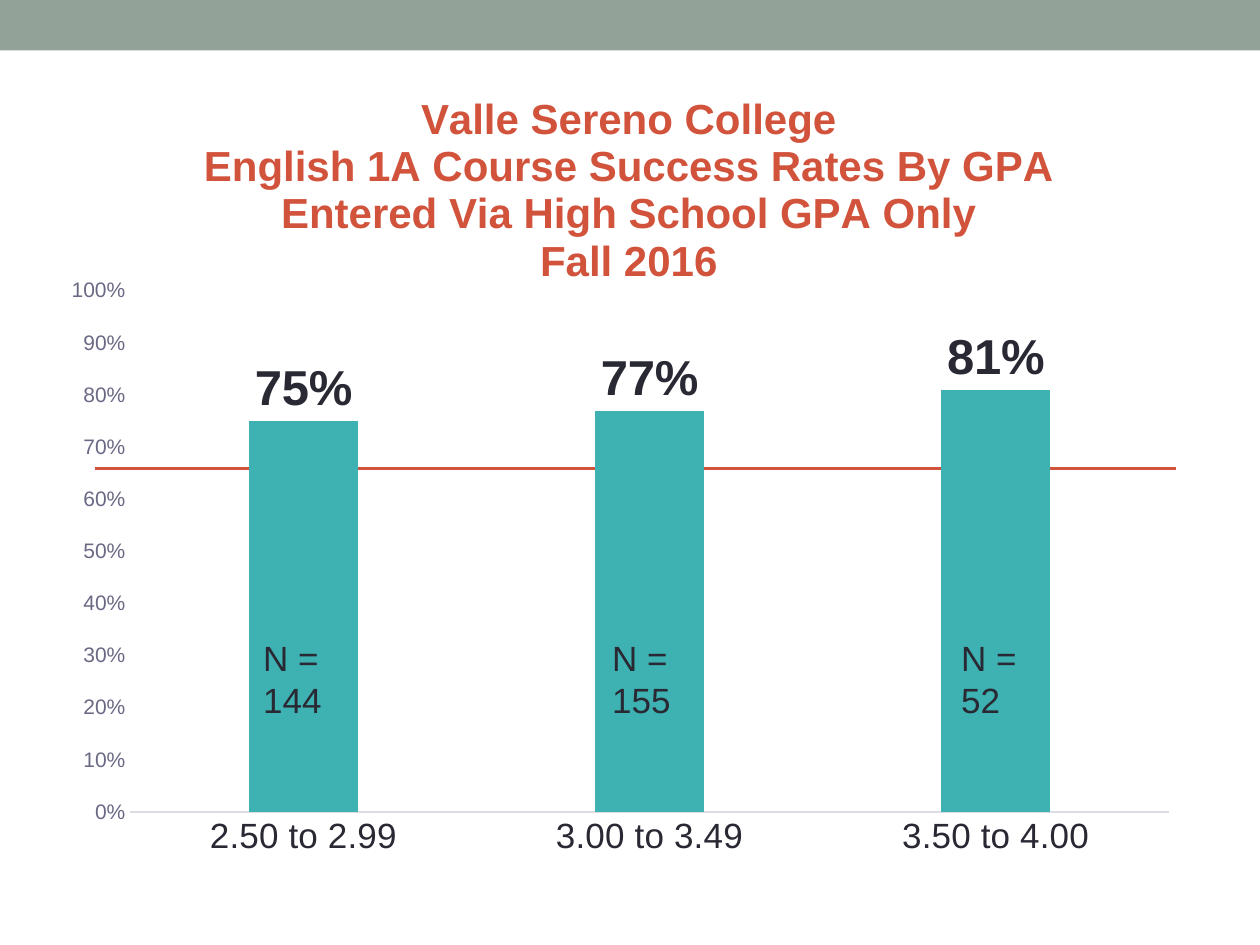
import pptx
import pptx.chart.data
import pptx.dml.color
import pptx.enum.chart
import pptx.enum.shapes
import pptx.oxml
import pptx.util
from pptx.util import Inches, Pt

FONT = "Arial"
COLORS = {"band": "93A299", "accent": "D2533C", "bar": "3EB1B2",
          "text": "292934", "muted": "696986", "axis": "DCDCE3"}
TITLE = ["Valle Sereno College",
         "English 1A Course Success Rates By GPA",
         "Entered Via High School GPA Only",
         "Fall 2016"]
GPA_BANDS = [("2.50 to 2.99", 0.75, "N = 144"),
             ("3.00 to 3.49", 0.77, "N = 155"),
             ("3.50 to 4.00", 0.81, "N = 52")]
COUNT_LEFT, COUNT_STEP, COUNT_TOP = 1.99, 2.77, 5.0
NS = 'xmlns:c="http://schemas.openxmlformats.org/drawingml/2006/chart"'
NS_A = 'xmlns:a="http://schemas.openxmlformats.org/drawingml/2006/main"'


def rgb(name):
    return pptx.dml.color.RGBColor.from_string(COLORS[name])


def set_font(font, size, color, bold=False):
    font.name, font.size, font.bold = FONT, Pt(size), bold
    font.color.rgb = rgb(color)


def layout_xml(x, y, w=None, h=None):
    """Manual chart layout in fractions; with a size it places the inner plot area."""
    inner = '<c:layoutTarget val="inner"/>' if w else ""
    size = f'<c:w val="{w}"/><c:h val="{h}"/>' if w else ""
    return pptx.oxml.parse_xml(
        f'<c:layout {NS}><c:manualLayout>{inner}<c:xMode val="edge"/>'
        f'<c:yMode val="edge"/><c:x val="{x}"/><c:y val="{y}"/>{size}'
        '</c:manualLayout></c:layout>')


def replace_layout(parent, layout, index):
    for old in parent.findall(layout.tag):
        parent.remove(old)
    parent.insert(index, layout)


def add_band(s):
    sp = s.shapes.add_shape(pptx.enum.shapes.MSO_SHAPE.RECTANGLE,
                            0, 0, Inches(10), Inches(0.4))
    sp.shadow.inherit = False
    sp.fill.solid()
    sp.fill.fore_color.rgb = rgb("band")
    sp.line.fill.background()


def add_reference_line(s):
    y = Inches(3.72)
    line = s.shapes.add_connector(pptx.enum.shapes.MSO_CONNECTOR.STRAIGHT,
                                  Inches(0.75), y, Inches(9.33), y)
    line.line.color.rgb = rgb("accent")
    line.line.width = Pt(1.5)
    line._element.spPr.append(pptx.oxml.parse_xml(f"<a:effectLst {NS_A}/>"))


def add_title(chart):
    tf = chart.chart_title.text_frame
    for i, text in enumerate(TITLE):
        p = tf.add_paragraph() if i else tf.paragraphs[0]
        r = p.add_run()
        r.text = text
        set_font(r.font, 24, "accent", True)
    chart.chart_title.include_in_layout = False
    replace_layout(chart.chart_title._element, layout_xml(0.132, 0.028), 1)


def style_axes(chart):
    none = pptx.enum.chart.XL_TICK_MARK.NONE
    cat, val = chart.category_axis, chart.value_axis
    for axis, size, color in ((cat, 20, "text"), (val, 12, "muted")):
        axis.major_tick_mark = axis.minor_tick_mark = none
        axis.has_major_gridlines = False
        set_font(axis.tick_labels.font, size, color)
    cat.format.line.color.rgb = rgb("axis")
    cat.format.line.width = Pt(0.75)
    val.format.line.fill.background()
    val.minimum_scale, val.maximum_scale, val.major_unit = 0, 1, 0.1
    val.tick_labels.number_format = "0%"
    val.tick_labels.number_format_is_linked = False


def add_success_chart(s):
    data = pptx.chart.data.CategoryChartData(number_format="0%")
    data.categories = [band for band, _, _ in GPA_BANDS]
    data.add_series("Series 1", [rate for _, rate, _ in GPA_BANDS])
    chart = s.shapes.add_chart(pptx.enum.chart.XL_CHART_TYPE.COLUMN_CLUSTERED,
                               Inches(0.37), Inches(0.53), Inches(9.23), Inches(6.61),
                               data).chart
    set_font(chart.font, 10, "text")
    chart.has_legend = False
    add_title(chart)
    style_axes(chart)

    plot = chart.plots[0]
    plot.gap_width, plot.overlap, plot.vary_by_categories = 219, -27, False
    series = plot.series[0]
    series.format.fill.solid()
    series.format.fill.fore_color.rgb = rgb("bar")
    labels = series.data_labels
    labels.show_value = True
    labels.number_format, labels.number_format_is_linked = "0%", False
    labels.position = pptx.enum.chart.XL_LABEL_POSITION.OUTSIDE_END
    set_font(labels.font, 28, "text", True)

    # The reference line behind the chart shows through a clear background.
    root = chart._chartSpace
    clear = f"<c:spPr {NS} {NS_A}><a:noFill/><a:ln><a:noFill/></a:ln></c:spPr>"
    root.chart.addnext(pptx.oxml.parse_xml(clear))
    root.chart.plotArea.append(pptx.oxml.parse_xml(clear))
    replace_layout(root.chart.plotArea, layout_xml(0.072, 0.269, 0.893, 0.626), 0)


def add_counts(s):
    for i, (_, _, count) in enumerate(GPA_BANDS):
        box = s.shapes.add_textbox(Inches(COUNT_LEFT + i * COUNT_STEP),
                                   Inches(COUNT_TOP), Inches(0.99), Inches(0.77))
        tf = box.text_frame
        tf.word_wrap = True
        r = tf.paragraphs[0].add_run()
        r.text = count
        set_font(r.font, 20, "text")


def main():
    prs = pptx.Presentation()
    prs.slide_width, prs.slide_height = Inches(10), Inches(7.5)
    s = prs.slides.add_slide(prs.slide_layouts[6])
    add_band(s)
    add_reference_line(s)
    add_success_chart(s)
    add_counts(s)
    prs.save("out.pptx")


if __name__ == "__main__":
    main()
